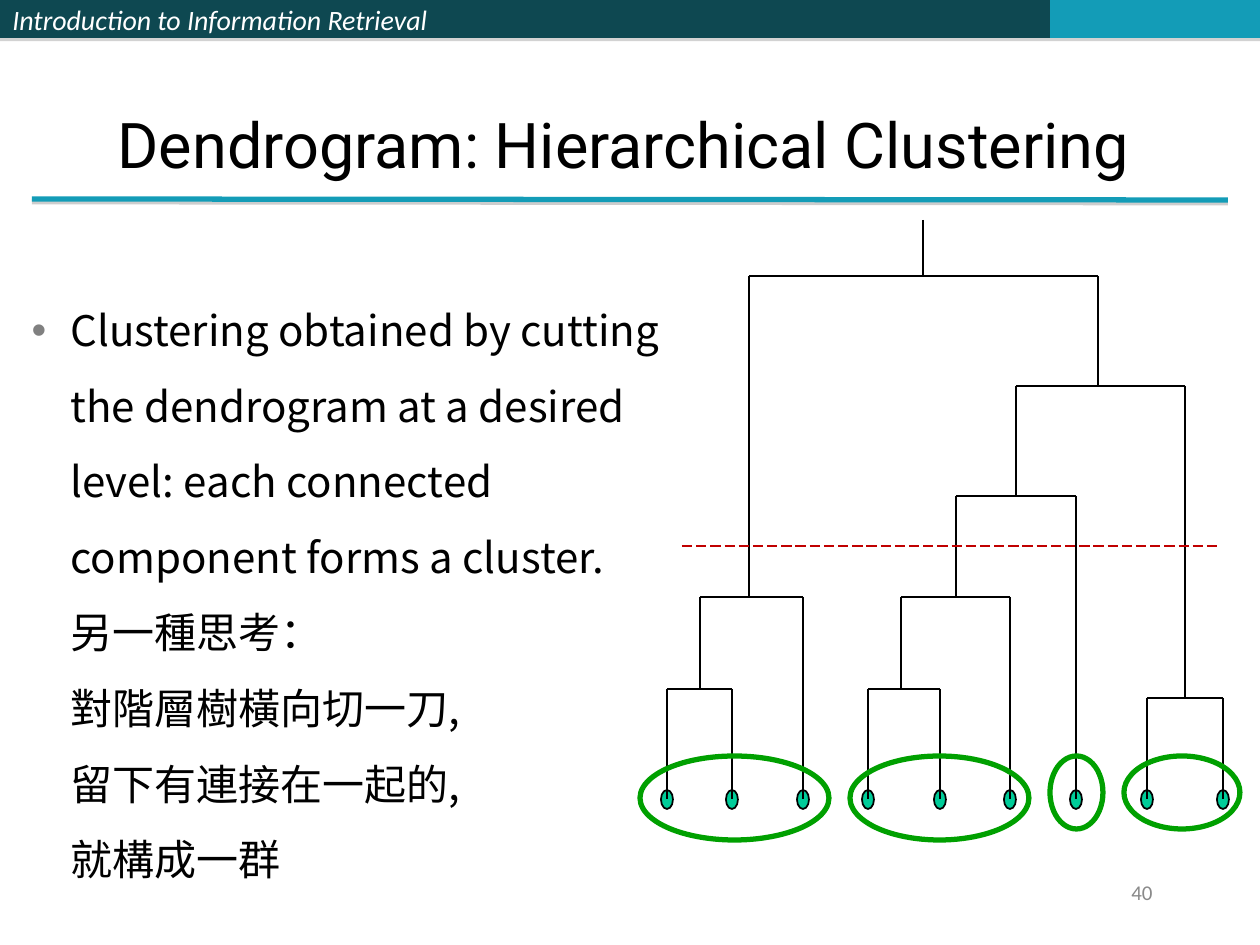
from dataclasses import dataclass

from lxml import etree
from pptx import Presentation, util as u
from pptx.dml.color import RGBColor
from pptx.enum import dml, shapes, text
from pptx.oxml.ns import qn


@dataclass(frozen=True)
class Theme:
    dark: str = "0E4851"
    teal: str = "139CB7"
    white: str = "FFFFFF"
    black: str = "000000"
    grey: str = "898989"
    bullet: str = "808080"
    leaf: str = "00CC99"
    cluster: str = "00A000"
    cut: str = "C00000"
    title_font: str = "Roboto"
    body_font: str = "Noto Sans CJK SC"
    small_font: str = "Calibri"
    title_size: int = 36
    body_size: int = 24
    header_size: int = 16
    number_size: int = 12


def px(n):
    return round(n * 914400 / 126)


def rgb(value):
    return RGBColor.from_string(value)


class Deck:
    def __init__(self, theme):
        self.theme = theme
        self.prs = Presentation()
        self.prs.slide_width, self.prs.slide_height = px(1260), px(945)
        self.s = self.prs.slides.add_slide(self.prs.slide_layouts[1])
        self.target = self.s.shapes

    def start_group(self):
        self.target = self.s.shapes.add_group_shape().shapes

    def end_group(self):
        self.target = self.s.shapes

    def effects(self, sp, shadow=None):
        """Replace inherited effects; shadow is (distance in pt, opacity %)."""
        pr = sp._element.spPr
        for old in pr.findall(qn("a:effectLst")):
            pr.remove(old)
        effect = etree.SubElement(pr, qn("a:effectLst"))
        if shadow:
            distance, opacity = shadow
            outer = etree.SubElement(effect, qn("a:outerShdw"), blurRad="0",
                                     dist=str(u.Pt(distance)), dir="5400000", rotWithShape="0")
            colour = etree.SubElement(outer, qn("a:srgbClr"), val="808080")
            etree.SubElement(colour, qn("a:alpha"), val=str(opacity * 1000))

    def shape(self, kind, x, y, w, h, fill=None, line=None, width=1, shadow=None):
        sp = self.target.add_shape(kind, px(x), px(y), px(w), px(h))
        if fill:
            sp.fill.solid()
            sp.fill.fore_color.rgb = rgb(fill)
        else:
            sp.fill.background()
        if line:
            sp.line.color.rgb = rgb(line)
            sp.line.width = u.Pt(width)
        else:
            sp.line.fill.background()
        self.effects(sp, shadow)
        return sp

    def line(self, x1, y1, x2, y2, color, width=1.0, dash=None, shadow=None):
        c = self.target.add_connector(shapes.MSO_CONNECTOR.STRAIGHT,
                                      px(x1), px(y1), px(x2), px(y2))
        c.line.color.rgb = rgb(color)
        c.line.width = u.Pt(width)
        if dash:
            c.line.dash_style = dash
        self.effects(c, shadow)

    def run(self, p, words, font, size, color, italic=None):
        r = p.add_run()
        r.text = words
        r.font.name, r.font.size, r.font.italic = font, u.Pt(size), italic
        r.font.color.rgb = rgb(color)
        etree.SubElement(r.font._element, qn("a:ea"), typeface=font)

    def frame(self, sp, anchor):
        tf = sp.text_frame
        tf.word_wrap = True
        tf.auto_size = text.MSO_AUTO_SIZE.NONE
        tf.vertical_anchor = anchor
        return tf

    def label(self, sp, words, font, size, color, align=text.PP_ALIGN.LEFT, italic=None):
        p = self.frame(sp, text.MSO_ANCHOR.MIDDLE).paragraphs[0]
        p.alignment = align
        self.run(p, words, font, size, color, italic)

    def place(self, sp, x, y, w, h):
        sp.left, sp.top, sp.width, sp.height = px(x), px(y), px(w), px(h)
        return sp

    def title(self, words, *box):
        t = self.theme
        self.label(self.place(self.s.shapes.title, *box), words,
                   t.title_font, t.title_size, t.black)

    def body(self, lines, *box):
        """The first line carries the bullet; the rest align with its text."""
        t = self.theme
        tf = self.frame(self.place(self.s.placeholders[1], *box), text.MSO_ANCHOR.TOP)
        for i, words in enumerate(lines):
            p = tf.add_paragraph() if i else tf.paragraphs[0]
            p.level = 1
            p.line_spacing = 1.5
            p.space_before = u.Pt(0)
            pr = p._p.get_or_add_pPr()
            pr.set("marL", str(px(102)))
            pr.set("indent", str(0 if i else -px(39)))
            if i:
                etree.SubElement(pr, qn("a:buNone"))
            else:
                colour = etree.SubElement(pr, qn("a:buClr"))
                etree.SubElement(colour, qn("a:srgbClr"), val=t.bullet)
                etree.SubElement(pr, qn("a:buFont"), typeface="Arial")
                etree.SubElement(pr, qn("a:buChar"), char="•")
            self.run(p, words, t.body_font, t.body_size, t.black)

    def text_box(self, words, x, y, w, h, font, size, color, align):
        sp = self.target.add_textbox(px(x), px(y), px(w), px(h))
        self.label(sp, words, font, size, color, align)

    def dendrogram(self, leaves, leaf_y, merges, top):
        """Each merge is (left node, right node, stem x, bar y)."""
        t = self.theme
        self.start_group()
        for x in leaves:
            self.shape(shapes.MSO_SHAPE.OVAL, x - 6, leaf_y - 9, 12, 19, t.leaf, t.black)
        nodes = [(x, leaf_y) for x in leaves]
        for left, right, stem, y in merges:
            for x, low in (nodes[left], nodes[right]):
                self.line(x, y, x, low, t.black)
            self.line(nodes[left][0], y, nodes[right][0], y, t.black)
            nodes.append((stem, y))
        x, y = nodes[-1]
        self.line(x, top, x, y, t.black)
        self.end_group()


def main():
    t = Theme()
    d = Deck(t)
    rect, oval = shapes.MSO_SHAPE.RECTANGLE, shapes.MSO_SHAPE.OVAL

    # Header band and rule
    bars = [d.shape(rect, x, 0, w, 38, fill, shadow=(1.8, 35))
            for x, w, fill in ((0, 514, t.dark), (514, 536, t.dark), (1050, 210, t.teal))]
    d.label(bars[0], "Introduction to Information Retrieval",
            t.small_font, t.header_size, t.white, italic=True)
    d.line(32, 199, 1228, 200, t.teal, 3, shadow=(1.6, 38))

    # Title, body and slide number
    d.title("Dendrogram: Hierarchical Clustering", 105, 101, 1081, 84)
    d.body(["Clustering obtained by cutting the dendrogram at a desired level: "
            "each connected component forms a cluster.",
            "另一種思考：", "對階層樹橫向切一刀,", "留下有連接在一起的,", "就構成一群"],
           -44, 273, 745, 546)
    d.text_box("40", 903, 861, 262, 63, t.small_font, t.number_size, t.grey,
               text.PP_ALIGN.RIGHT)

    # Dendrogram: nodes 0-8 are leaves, each merge adds the next node
    d.dendrogram([667, 732, 803, 868, 940, 1010, 1076, 1147, 1223], 799,
                 [(0, 1, 700, 689), (9, 2, 749, 597),
                  (3, 4, 901, 689), (11, 5, 956, 597), (12, 6, 1016, 496),
                  (7, 8, 1185, 698), (13, 14, 1098, 386), (10, 15, 923, 276)], 220)

    # Cut level and resulting clusters
    d.line(682, 546, 1218, 546, t.cut, 0.75, dml.MSO_LINE.LONG_DASH)
    for x, w, h in ((640, 189, 84), (850, 179, 84), (1050, 53, 73), (1124, 116, 73)):
        d.shape(oval, x, 756, w, h, line=t.cluster, width=3)

    d.prs.save("out.pptx")


if __name__ == "__main__":
    main()
